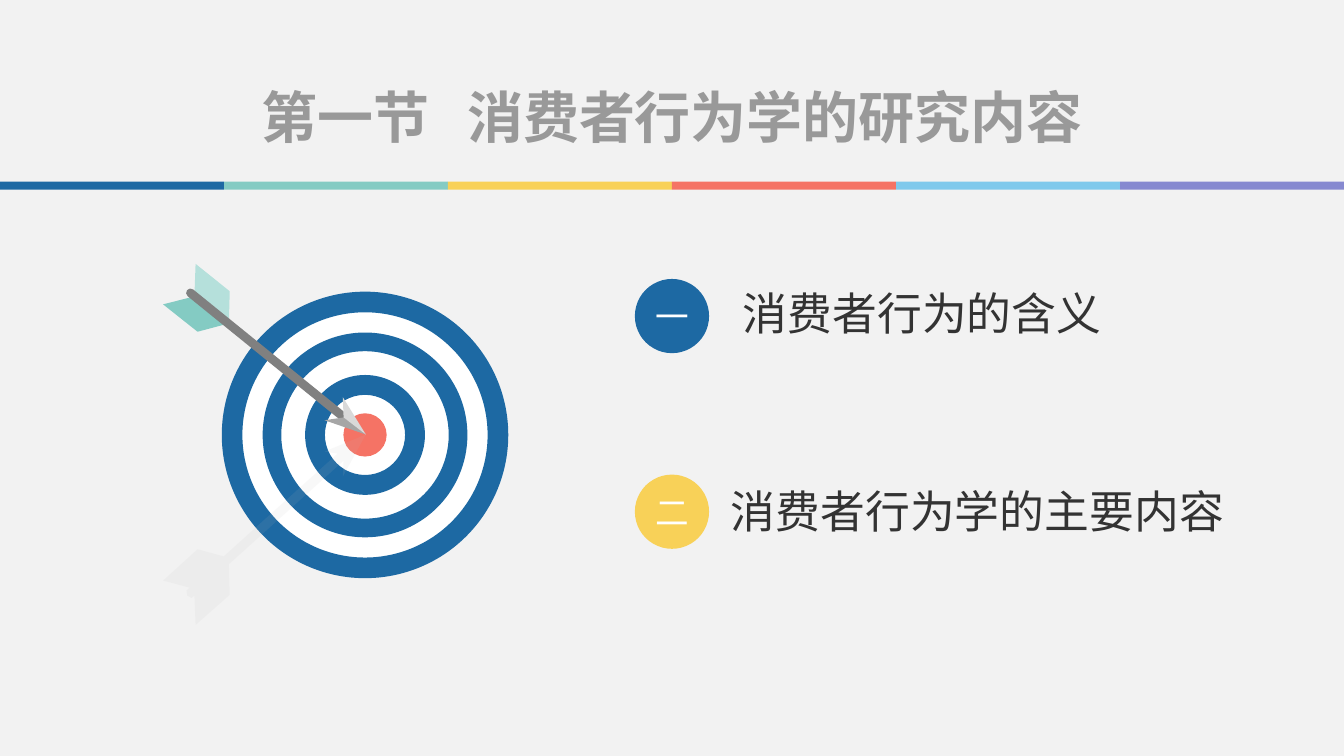
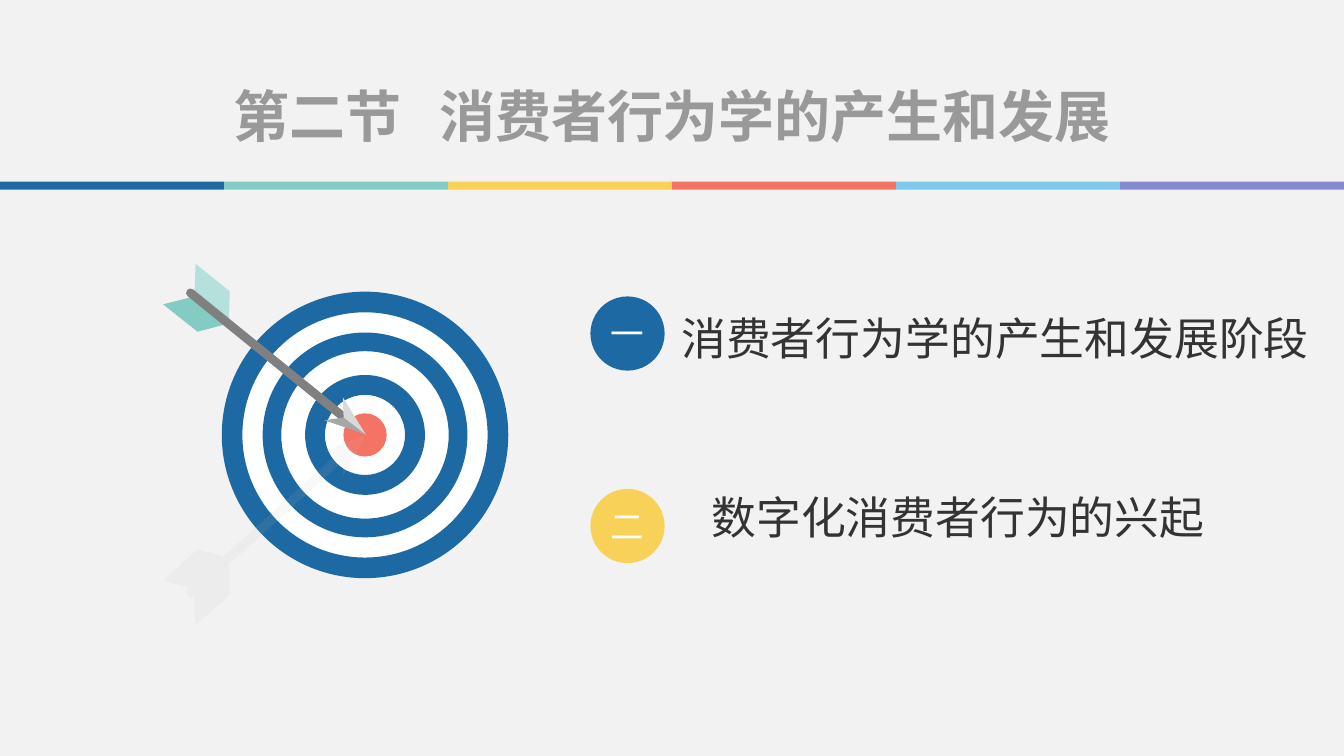
from pptx import Presentation
from pptx.dml.color import RGBColor
from pptx.enum import shapes, text
from pptx.oxml import ns, xmlchemy
from pptx.util import Cm, Pt

# Lengths are centimetres, text sizes and line widths are points.
COLORS = {
    "background": "F2F2F2", "title": "999999", "body": "333333", "white": "FFFFFF",
    "blue": "1D69A3", "teal": "84CBC3", "pale_teal": "B5E0DB", "yellow": "F8D158",
    "coral": "F57365", "sky": "7FC9EC", "violet": "8689D0",
    "shaft": "808080", "dark_steel": "A6A6A6", "light_steel": "D9D9D9", "shadow": "BFBFBF",
}
TITLE_FONT, BODY_FONT = "Roboto Condensed", "Calibri"
SLIDE_WIDTH, SLIDE_HEIGHT = 33.87, 19.05

# Item: number, badge top, wording, then left, top and width of the wording
SECTIONS = [
    {
        "title": ("第一节", "消费者行为学的研究内容"),
        "title_top": 1.96, "title_width": 21.74, "badge_left": 16,
        "items": [
            ("一", 7.03, "消费者行为的含义", (18.72, 7.19, 12.32)),
            ("二", 11.96, "消费者行为学的主要内容", (18.42, 12.19, 13.26)),
        ],
    },
    {
        "title": ("第二节", "消费者行为学的产生和发展"),
        "title_top": 1.93, "title_width": 24.36, "badge_left": 14.88,
        "items": [
            ("一", 7.47, "消费者行为学的产生和发展阶段", (17.17, 7.82, 16.48)),
            ("二", 12.32, "数字化消费者行为的兴起", (17.93, 12.34, 13.26)),
        ],
    },
]
BADGE_SIZE, BADGE_COLORS = 1.87, ("blue", "yellow")
TITLE_HEIGHT, ITEM_HEIGHT, TITLE_GAP = 1.96, 1.37, 18

BAND_COLORS = ("blue", "teal", "yellow", "coral", "sky", "violet")
BAND_TOP, BAND_HEIGHT = 4.58, 0.2

TARGET_CENTER = (9.2, 10.96)
DISCS = [(7.16, "white"), (1.09, "coral")]
RINGS = [(7.22, 0.52), (5.16, 0.47), (3.02, 0.5)]  # diameter, thickness

FEATHERS = [
    ("teal", [(5.77, 8.15), (4.98, 8.36), (4.11, 7.67), (4.9, 7.47)]),
    ("pale_teal", [(5.77, 8.15), (5.79, 7.34), (4.93, 6.65), (4.9, 7.47)]),
]
SHAFT_START, SHAFT_END, SHAFT_WIDTH = (4.8, 7.38), (8.92, 10.72), 6.25
ARROWHEAD = [
    ("dark_steel", [(8.18, 10.59), (9.22, 10.95), (8.66, 10.52)]),
    ("light_steel", [(8.66, 10.52), (9.22, 10.95), (8.64, 10.01)]),
]
ARROW_SHADOW = [
    (9.22, 10.95), (8.64, 12.01), (8.66, 11.61), (5.77, 14.22), (5.79, 14.99),
    (4.93, 15.75), (4.9, 15.01), (4.83, 15.07), (4.72, 15.01), (4.7, 14.88),
    (4.78, 14.81), (4.11, 14.63), (4.98, 13.84), (5.64, 14.02), (8.51, 11.43),
    (8.18, 11.38),
]
SHADOW_OPACITY = 10


def rgb(name):
    return RGBColor.from_string(COLORS[name])


def paint(shape, color):
    """Give a shape a flat fill with neither outline nor shadow."""
    shape.shadow.inherit = False
    shape.fill.solid()
    shape.fill.fore_color.rgb = rgb(color)
    shape.line.fill.background()
    return shape


def place(shape, left, top, width, height):
    shape.left, shape.top, shape.width, shape.height = map(Cm, (left, top, width, height))


def write(shape, *parts, size, color, font=BODY_FONT, bold=False, align="LEFT",
          anchor="TOP", inset=0, gap=0):
    """Write one unbulleted line; parts are set apart by a space widened by gap."""
    frame = shape.text_frame
    frame.word_wrap = True
    frame.auto_size = text.MSO_AUTO_SIZE.NONE
    frame.vertical_anchor = getattr(text.MSO_ANCHOR, anchor)
    frame.margin_left = frame.margin_right = Cm(2 * inset)
    frame.margin_top = frame.margin_bottom = Cm(inset)
    line = frame.paragraphs[0]
    line.alignment = getattr(text.PP_ALIGN, align)
    line.space_before = Pt(0)
    properties = line._p.get_or_add_pPr()
    properties.set("marL", "0")
    properties.set("indent", "0")
    properties.append(xmlchemy.OxmlElement("a:buNone"))
    for index, part in enumerate(parts):
        for wording in ([" ", part] if index else [part]):
            run = line.add_run()
            run.text = wording
            run.font.name, run.font.size, run.font.bold = font, Pt(size), bold
            run.font.color.rgb = rgb(color)
            if wording == " ":
                run._r.get_or_add_rPr().set("spc", str(gap * 100))


def add_centered(parent, preset, diameter):
    """Add a round shape about the centre of the target."""
    left, top = (Cm(middle - diameter / 2) for middle in TARGET_CENTER)
    return parent.shapes.add_shape(preset, left, top, Cm(diameter), Cm(diameter))


def add_polygon(parent, points, color):
    start, *rest = [(Cm(x), Cm(y)) for x, y in points]
    builder = parent.shapes.build_freeform(*start)
    builder.add_line_segments(rest, close=True)
    return paint(builder.convert_to_shape(), color)


def add_target(slide):
    target = slide.shapes.add_group_shape()
    for diameter, color in DISCS:
        paint(add_centered(target, shapes.MSO_SHAPE.OVAL, diameter), color)
    for diameter, thickness in RINGS:
        ring = paint(add_centered(target, shapes.MSO_SHAPE.DONUT, diameter), "blue")
        ring.adjustments[0] = thickness / diameter


def add_arrow(slide):
    arrow = slide.shapes.add_group_shape()
    for color, points in FEATHERS:
        add_polygon(arrow, points, color)
    shaft = arrow.shapes.add_connector(
        shapes.MSO_CONNECTOR.STRAIGHT, *map(Cm, SHAFT_START + SHAFT_END))
    shaft.line.width = Pt(SHAFT_WIDTH)
    shaft.line.color.rgb = rgb("shaft")
    properties = shaft._element.spPr
    properties.find(ns.qn("a:ln")).set("cap", "rnd")
    properties.append(xmlchemy.OxmlElement("a:effectLst"))
    for color, points in ARROWHEAD:
        add_polygon(arrow, points, color)

    shadow = add_polygon(slide, ARROW_SHADOW, "shadow")
    alpha = xmlchemy.OxmlElement("a:alpha")
    alpha.set("val", str(SHADOW_OPACITY * 1000))
    shadow._element.spPr.find(ns.qn("a:solidFill"))[0].append(alpha)


def add_bands(slide):
    bands = slide.shapes.add_group_shape()
    width = SLIDE_WIDTH / len(BAND_COLORS)
    for index, color in enumerate(BAND_COLORS):
        paint(bands.shapes.add_shape(
            shapes.MSO_SHAPE.RECTANGLE, Cm(index * width), Cm(BAND_TOP),
            Cm(width), Cm(BAND_HEIGHT)), color)


def add_section(prs, section):
    slide = prs.slides.add_slide(prs.slide_layouts.get_by_name("Two Content"))
    title, *bodies = slide.placeholders
    width = section["title_width"]
    place(title, (SLIDE_WIDTH - width) / 2, section["title_top"], width, TITLE_HEIGHT)
    write(title, *section["title"], size=40, color="title", font=TITLE_FONT, bold=True,
          align="CENTER", inset=0.13, gap=TITLE_GAP)
    add_bands(slide)
    add_target(slide)
    add_arrow(slide)

    for body, color, item in zip(bodies, BADGE_COLORS, section["items"]):
        number, badge_top, wording, box = item
        place(body, *box, ITEM_HEIGHT)
        write(body, wording, size=32, color="body")
        badge = paint(slide.shapes.add_shape(
            shapes.MSO_SHAPE.OVAL, Cm(section["badge_left"]), Cm(badge_top),
            Cm(BADGE_SIZE), Cm(BADGE_SIZE)), color)
        write(badge, number, size=24, color="white", align="CENTER", anchor="MIDDLE")


def main():
    prs = Presentation()
    prs.slide_width, prs.slide_height = Cm(SLIDE_WIDTH), Cm(SLIDE_HEIGHT)
    background = prs.slide_master.background.fill
    background.solid()
    background.fore_color.rgb = rgb("background")
    for section in SECTIONS:
        add_section(prs, section)
    prs.save("out.pptx")


if __name__ == "__main__":
    main()
